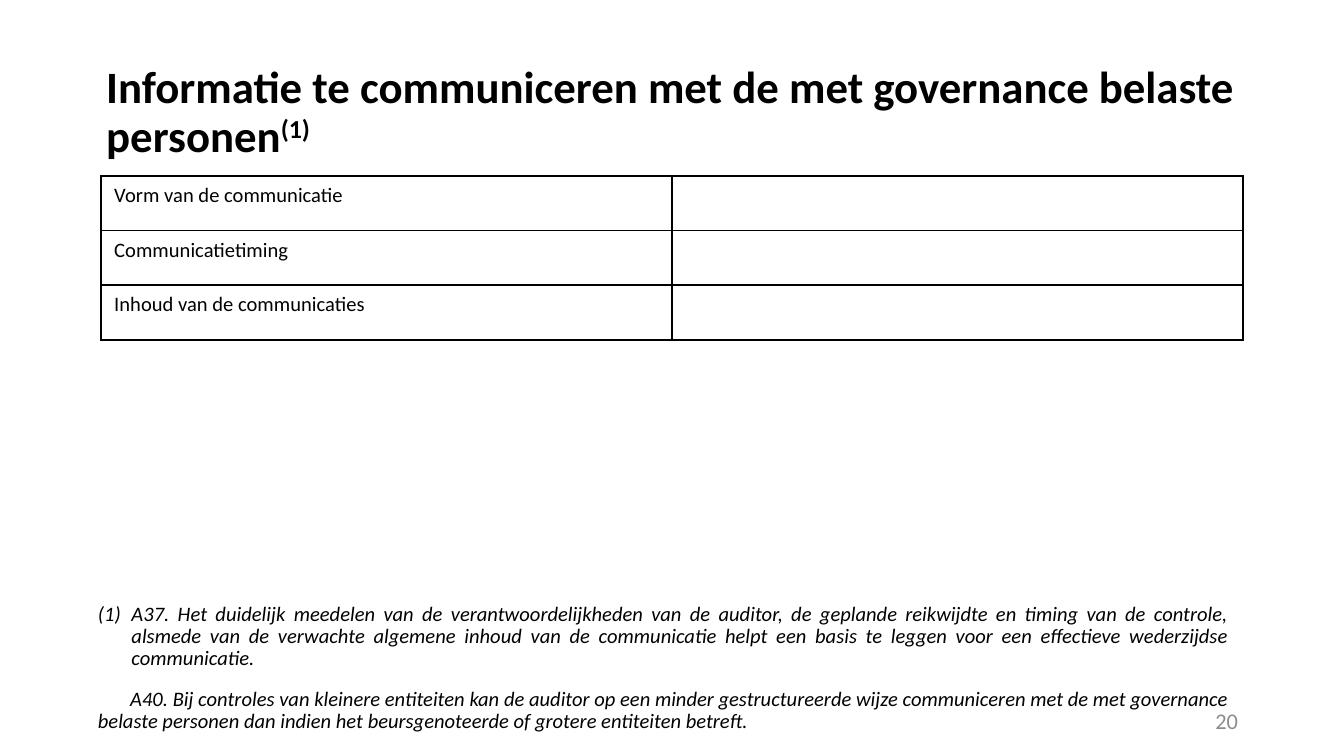
from lxml import etree
from pptx import Presentation, util as u
from pptx.dml.color import RGBColor
from pptx.enum import text
from pptx.oxml import ns

COLORS = {"ink": "000000", "number": "8C8C8C"}
BODY = {"name": "Calibri", "size": u.Pt(11), "bold": False}
NOTE = {**BODY, "italic": True}
HEADING = {"name": "Calibri", "size": u.Pt(24), "bold": True}
NUMBER = {"name": "Calibri", "size": u.Pt(12)}
NOTE_PARAGRAPH = {
    "alignment": text.PP_ALIGN.JUSTIFY,
    "line_spacing": 0.9,
    "space_before": u.Pt(10),
}


def style(font, values, color="ink"):
    for key, value in values.items():
        setattr(font, key, value)
    font.color.rgb = RGBColor.from_string(COLORS[color])


def add_run(paragraph, wording, values, color="ink"):
    run = paragraph.add_run()
    run.text = wording
    style(run.font, values, color)
    return run


prs = Presentation()
prs.slide_width = u.Inches(10)
prs.slide_height = u.Inches(10 * 9 / 16)
slide = prs.slides.add_slide(prs.slide_layouts[5])

title = slide.shapes.title
title.left, title.top = u.Inches(0.69), u.Inches(0.3)
title.width, title.height = u.Inches(8.62), u.Inches(1.09)
title.text_frame.vertical_anchor = text.MSO_ANCHOR.MIDDLE
title.text_frame.auto_size = text.MSO_AUTO_SIZE.NONE
heading = title.text_frame.paragraphs[0]
heading.alignment = text.PP_ALIGN.LEFT
heading.line_spacing = 0.9
add_run(heading, "Informatie te communiceren met de met governance belaste personen", HEADING)
reference = add_run(heading, "(1)", HEADING)
reference._r.get_or_add_rPr().set("baseline", "30000")

page = slide.shapes.add_textbox(u.Inches(7.06), u.Inches(5.21), u.Inches(2.25), u.Inches(0.3))
page.text_frame.word_wrap = True
page.text_frame.vertical_anchor = text.MSO_ANCHOR.MIDDLE
page_number = page.text_frame.paragraphs[0]
page_number.alignment = text.PP_ALIGN.RIGHT
add_run(page_number, "20", NUMBER, "number")

footnote = slide.shapes.add_textbox(u.Inches(0.63), u.Inches(4.44), u.Inches(8.62), u.Inches(0.49))
footnote.text_frame.word_wrap = True
notes = [
    ("A37. Het duidelijk meedelen van de verantwoordelijkheden van de auditor, de geplande "
     "reikwijdte en timing van de controle, alsmede van de verwachte algemene inhoud van de "
     "communicatie helpt een basis te leggen voor een effectieve wederzijdse communicatie.",
     0.25, -0.25, True),
    ("A40. Bij controles van kleinere entiteiten kan de auditor op een minder gestructureerde "
     "wijze communiceren met de met governance belaste personen dan indien het beursgenoteerde "
     "of grotere entiteiten betreft.",
     0, 0.24, False),
]
for index, (wording, margin, indent, numbered) in enumerate(notes):
    frame = footnote.text_frame
    note = frame.add_paragraph() if index else frame.paragraphs[0]
    for key, value in NOTE_PARAGRAPH.items():
        setattr(note, key, value)
    add_run(note, wording, NOTE)
    properties = note._p.get_or_add_pPr()
    properties.set("marL", str(u.Inches(margin)))
    properties.set("indent", str(u.Inches(indent)))
    if numbered:
        etree.SubElement(properties, ns.qn("a:buFont"), typeface="+mj-lt")
        etree.SubElement(properties, ns.qn("a:buAutoNum"), type="arabicParenBoth")

topics = ["Vorm van de communicatie", "Communicatietiming", "Inhoud van de communicaties"]
overview = slide.shapes.add_table(
    len(topics), 2, u.Inches(0.75), u.Inches(1.31), u.Inches(8.5), u.Inches(1.22)
).table
overview.first_row = overview.horz_banding = False
for row, topic in enumerate(topics):
    for column, wording in enumerate([topic, ""]):
        cell = overview.cell(row, column)
        label = cell.text_frame.paragraphs[0]
        if wording:
            add_run(label, wording, BODY)
        else:
            style(label.font, BODY)
        properties = cell._tc.get_or_add_tcPr()
        for side in ("lnL", "lnR", "lnT", "lnB"):
            border = etree.SubElement(properties, ns.qn(f"a:{side}"), w=str(u.Pt(1)))
            fill = etree.SubElement(border, ns.qn("a:solidFill"))
            etree.SubElement(fill, ns.qn("a:srgbClr"), val=COLORS["ink"])
        cell.fill.background()

prs.save("out.pptx")
